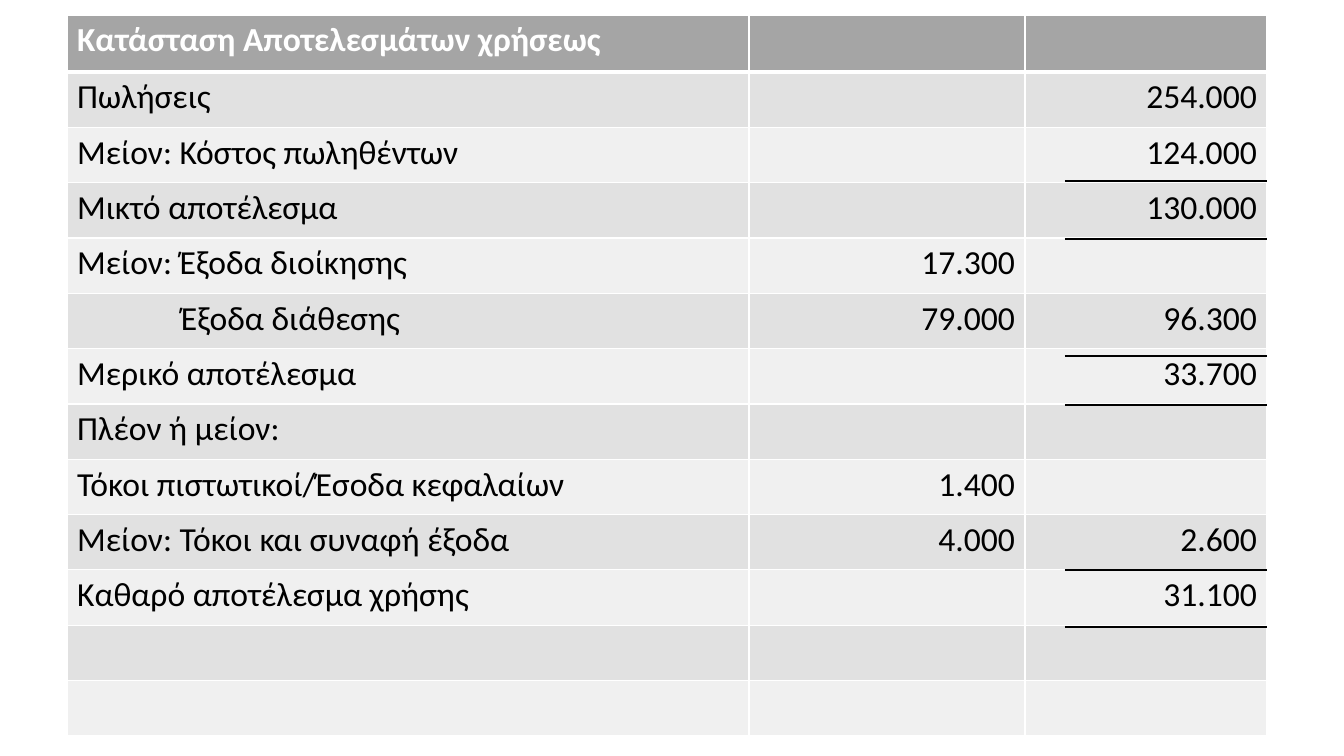
import pptx
import pptx.chart.data
import pptx.dml.color
import pptx.enum.shapes
import pptx.enum.text
import pptx.oxml
import pptx.oxml.ns
import pptx.util

STATEMENT = [
    ("Κατάσταση Αποτελεσμάτων χρήσεως", "", ""),
    ("Πωλήσεις", "", "254.000"),
    ("Μείον: Κόστος πωληθέντων", "", "124.000"),
    ("Μικτό αποτέλεσμα", "", "130.000"),
    ("Μείον: Έξοδα διοίκησης", "17.300", ""),
    ("Έξοδα διάθεσης", "79.000", "96.300"),
    ("Μερικό αποτέλεσμα", "", "33.700"),
    ("Πλέον ή μείον:", "", ""),
    ("Τόκοι πιστωτικοί/Έσοδα κεφαλαίων", "1.400", ""),
    ("Μείον: Τόκοι και συναφή έξοδα", "4.000", "2.600"),
    ("Καθαρό αποτέλεσμα χρήσης", "", "31.100"),
    ("", "", ""),
    ("", "", ""),
]
INDENTED_ROW = 5
INDENT = 114
LEFT, TOP, HEIGHT, HEADER_HEIGHT = 67, 15, 721, 57
COLUMN_WIDTHS = [682, 276, 242]
RULE_WIDTH = 202
RULE_YS = [181, 239, 356, 405, 570, 627]
HEADER_FILL, BAND_FILLS = "A5A5A5", ["F0F0F0", "E1E1E1"]
WHITE, BLACK = "FFFFFF", "000000"


def px(n):
    return pptx.util.Emu(round(n * 914400 / 100.8))


def color(value):
    return pptx.dml.color.RGBColor.from_string(value)


def set_borders(cell, bottom_pt):
    tcPr = cell._tc.get_or_add_tcPr()
    for side, width in (("L", 1), ("R", 1), ("T", 1), ("B", bottom_pt)):
        tcPr.append(pptx.oxml.parse_xml(
            f'<a:ln{side} {pptx.oxml.ns.nsdecls("a")} w="{pptx.util.Pt(width)}">'
            f'<a:solidFill><a:srgbClr val="{WHITE}"/></a:solidFill></a:ln{side}>'))


def fill_cell(cell, text, row, col):
    header = row == 0
    set_borders(cell, 3 if header else 1)
    cell.fill.solid()
    cell.fill.fore_color.rgb = color(HEADER_FILL if header else BAND_FILLS[row % 2])
    if not text:
        return
    cell.text_frame.text = text
    p = cell.text_frame.paragraphs[0]
    if col > 0:
        p.alignment = pptx.enum.text.PP_ALIGN.RIGHT
    font = p.runs[0].font
    font.name, font.size, font.bold = "Calibri", pptx.util.Pt(24), header
    font.color.rgb = color(WHITE if header else BLACK)


def add_statement(s):
    width = sum(COLUMN_WIDTHS)
    table = s.shapes.add_table(len(STATEMENT), len(COLUMN_WIDTHS), px(LEFT),
                               px(TOP), px(width), px(HEIGHT)).table
    for column, column_width in zip(table.columns, COLUMN_WIDTHS):
        column.width = px(column_width)
    body_height = (HEIGHT - HEADER_HEIGHT) / (len(STATEMENT) - 1)
    for i, texts in enumerate(STATEMENT):
        table.rows[i].height = px(body_height if i else HEADER_HEIGHT)
        for j, text in enumerate(texts):
            fill_cell(table.cell(i, j), text, i, j)
    table.cell(INDENTED_ROW, 0).margin_left = px(INDENT)


def add_total_rule(s, y):
    right = LEFT + sum(COLUMN_WIDTHS)
    rule = s.shapes.add_connector(pptx.enum.shapes.MSO_CONNECTOR.STRAIGHT,
                                  px(right - RULE_WIDTH), px(y), px(right), px(y))
    rule.line.color.rgb = color(BLACK)
    rule.line.width = pptx.util.Pt(2)
    rule._element.spPr.append(pptx.oxml.parse_xml(
        f'<a:effectLst {pptx.oxml.ns.nsdecls("a")}/>'))


def main():
    prs = pptx.Presentation()
    prs.slide_width, prs.slide_height = px(1344), px(756)
    s = prs.slides.add_slide(prs.slide_layouts[6])
    add_statement(s)
    for y in RULE_YS:
        add_total_rule(s, y)
    prs.save("out.pptx")


if __name__ == "__main__":
    main()
